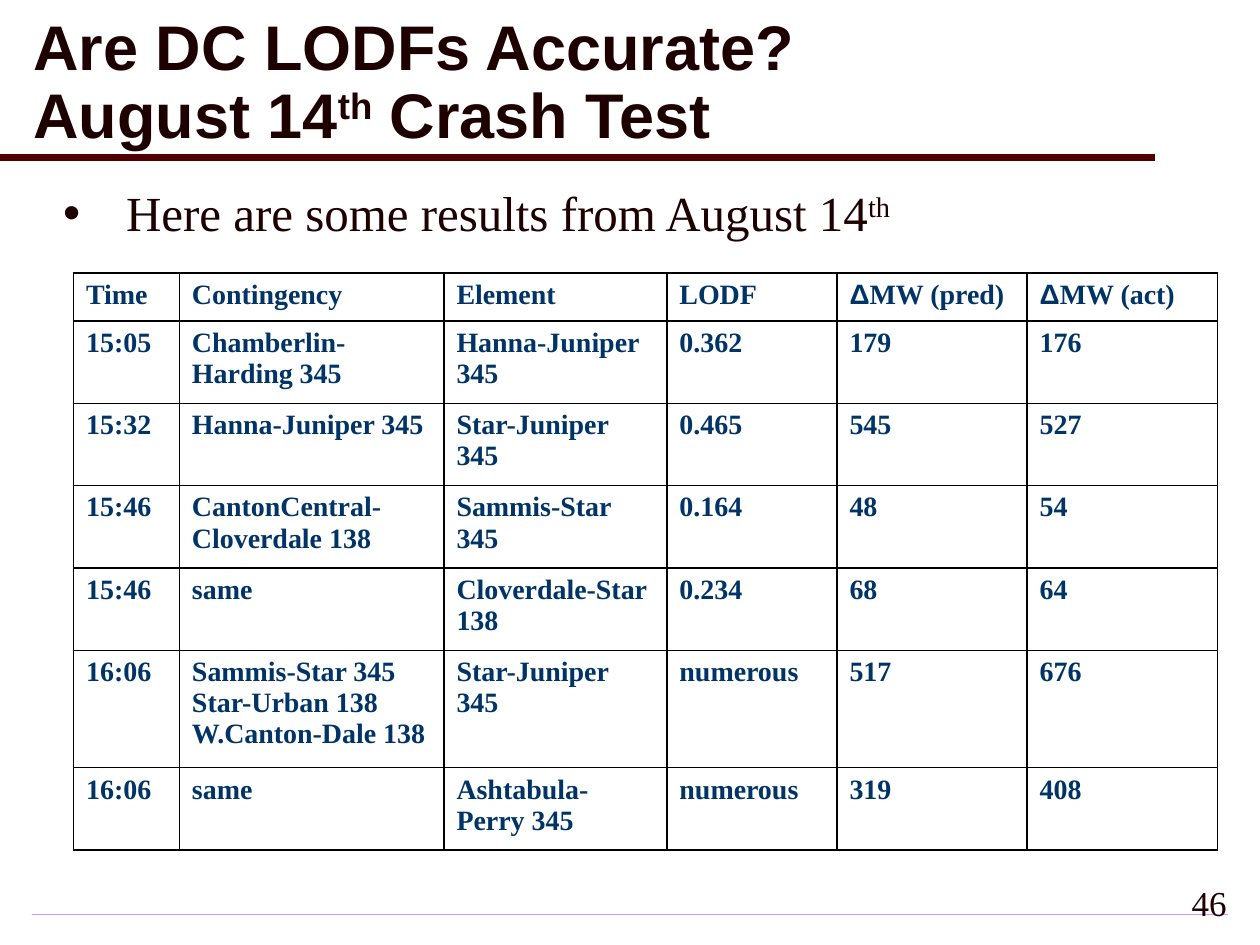
import pptx
import pptx.dml.color
import pptx.enum.shapes
import pptx.enum.text
import pptx.oxml
import pptx.oxml.ns
import pptx.util
from dataclasses import dataclass

Pt = pptx.util.Pt
RGB = pptx.dml.color.RGBColor.from_string
ALIGN = pptx.enum.text.PP_ALIGN
ANCHOR = pptx.enum.text.MSO_ANCHOR


@dataclass(frozen=True)
class Theme:
    heading_font: str = "Arial"
    body_font: str = "Times New Roman"
    ink: str = "1E0000"
    table_ink: str = "003366"
    border: str = "000000"
    title_rule: str = "500000"
    footer_start: str = "CC99FF"
    footer_end: str = "F3EBFF"
    title_size: int = 36
    body_size: int = 28
    number_size: int = 20
    table_size: int = 16


THEME = Theme()
TITLE_STYLE = {"name": THEME.heading_font, "size": Pt(THEME.title_size), "bold": True, "color": THEME.ink}
BODY_STYLE = {"name": THEME.body_font, "size": Pt(THEME.body_size), "color": THEME.ink}
NUMBER_STYLE = {**BODY_STYLE, "size": Pt(THEME.number_size)}
TABLE_STYLE = {"name": THEME.body_font, "size": Pt(THEME.table_size), "bold": True, "color": THEME.table_ink}

COLUMN_WIDTHS = [60.5, 151.2, 127.4, 97.2, 108.7, 108.7]
HEADER_HEIGHT = 27.4
LINE_HEIGHTS = {2: 47.1, 3: 67}
ROWS = [
    ["Time", "Contingency", "Element", "LODF", "ΔMW (pred)", "ΔMW (act)"],
    ["15:05", "Chamberlin-Harding 345", "Hanna-Juniper 345", "0.362", "179", "176"],
    ["15:32", "Hanna-Juniper 345", "Star-Juniper 345", "0.465", "545", "527"],
    ["15:46", "CantonCentral-Cloverdale 138", "Sammis-Star 345", "0.164", "48", "54"],
    ["15:46", "same", "Cloverdale-Star\n138", "0.234", "68", "64"],
    ["16:06", "Sammis-Star 345\nStar-Urban 138\nW.Canton-Dale 138", "Star-Juniper\n345", "numerous", "517", "676"],
    ["16:06", "same", "Ashtabula-Perry 345", "numerous", "319", "408"],
]


def make_element(xml):
    return pptx.oxml.parse_xml(xml.replace(" ", f" {pptx.oxml.ns.nsdecls('a')} ", 1))


def add_span(para, text, style):
    span = para.add_run()
    span.text = text
    for name, value in style.items():
        if name == "color":
            span.font.color.rgb = RGB(value)
        elif name == "baseline":
            span._r.get_or_add_rPr().set("baseline", str(value))
        else:
            setattr(span.font, name, value)


def add_superscript(para, text, style):
    add_span(para, text, {**style, "baseline": 30000})


def add_text_box(page, left, top, width, height, frame_format, para_format):
    box = page.shapes.add_textbox(Pt(left), Pt(top), Pt(width), Pt(height))
    frame = box.text_frame
    para = frame.paragraphs[0]
    for target, values in ((frame, {"word_wrap": True, **frame_format}), (para, para_format)):
        for name, value in values.items():
            setattr(target, name, value)
    return para


def add_bullet(para, indent):
    properties = para._p.get_or_add_pPr()
    properties.set("marL", str(Pt(indent)))
    properties.set("indent", str(Pt(-indent)))
    for xml in (
        f'<a:buClr ><a:srgbClr val="{THEME.ink}"/></a:buClr>',
        f'<a:buFont typeface="{THEME.heading_font}"/>',
        '<a:buChar char="•"/>',
    ):
        properties.append(make_element(xml))


def add_title_rule(page):
    rule = page.shapes.add_connector(
        pptx.enum.shapes.MSO_CONNECTOR.STRAIGHT, Pt(0), Pt(90), Pt(660), Pt(90))
    rule.line.color.rgb = RGB(THEME.title_rule)
    rule.line.width = Pt(4)
    rule._element.spPr.append(make_element("<a:effectLst />"))


def add_footer_rule(page):
    rule = page.shapes.add_shape(
        pptx.enum.shapes.MSO_SHAPE.RECTANGLE, Pt(18), Pt(522), Pt(684), Pt(0.72))
    rule.shadow.inherit = False
    rule.line.fill.background()
    rule.fill.gradient()
    for stop, color in zip(rule.fill.gradient_stops, (THEME.footer_start, THEME.footer_end)):
        stop.color.rgb = RGB(color)
    gradient = rule._element.spPr.find(pptx.oxml.ns.qn("a:gradFill"))
    linear = gradient.find(pptx.oxml.ns.qn("a:lin"))
    gradient.replace(linear, make_element(
        '<a:path path="shape"><a:fillToRect l="50000" t="50000" r="50000" b="50000"/></a:path>'))


def add_borders(cell):
    properties = cell._tc.get_or_add_tcPr()
    for position, side in enumerate("LRTB"):
        properties.insert(position, make_element(
            f'<a:ln{side} w="{Pt(1)}"><a:solidFill><a:srgbClr val="{THEME.border}"/>'
            f'</a:solidFill></a:ln{side}>'))


def fill_cell(cell, text):
    cell.fill.background()
    add_borders(cell)
    frame = cell.text_frame
    for number, line in enumerate(text.split("\n")):
        para = frame.add_paragraph() if number else frame.paragraphs[0]
        if line.startswith("Δ"):
            add_span(para, "Δ", {**TABLE_STYLE, "name": THEME.heading_font})
            line = line[1:]
        add_span(para, line, TABLE_STYLE)


def add_results_table(page):
    heights = [HEADER_HEIGHT] + [
        LINE_HEIGHTS[max(2, *(text.count("\n") + 1 for text in row))] for row in ROWS[1:]]
    table = page.shapes.add_table(
        len(ROWS), len(COLUMN_WIDTHS), Pt(42), Pt(156), Pt(sum(COLUMN_WIDTHS)), Pt(sum(heights))).table
    table.first_row = False
    table.horz_banding = False
    for column, width in zip(table.columns, COLUMN_WIDTHS):
        column.width = Pt(width)
    for row, height, texts in zip(table.rows, heights, ROWS):
        row.height = Pt(height)
        for cell, text in zip(row.cells, texts):
            fill_cell(cell, text)


def add_title(page):
    para = add_text_box(page, 12, 18, 690, 60, {"vertical_anchor": ANCHOR.MIDDLE}, {"line_spacing": 0.9})
    add_span(para, "Are DC LODFs Accurate?", TITLE_STYLE)
    para.add_line_break()
    add_span(para, "August 14", TITLE_STYLE)
    add_superscript(para, "th", TITLE_STYLE)
    add_span(para, " Crash Test", TITLE_STYLE)


def add_body(page):
    para = add_text_box(page, 29, 101, 612, 42, {}, {})
    add_bullet(para, 36)
    add_span(para, "Here are some results from August 14", BODY_STYLE)
    add_superscript(para, "th", BODY_STYLE)


def add_page_number(page):
    para = add_text_box(
        page, 558, 498, 150, 36, {"vertical_anchor": ANCHOR.MIDDLE}, {"alignment": ALIGN.RIGHT})
    add_span(para, "46", NUMBER_STYLE)


def main():
    deck = pptx.Presentation()
    deck.slide_width, deck.slide_height = Pt(720), Pt(540)
    page = deck.slides.add_slide(deck.slide_layouts[6])
    add_footer_rule(page)
    add_title_rule(page)
    add_page_number(page)
    add_title(page)
    add_body(page)
    add_results_table(page)
    deck.save("out.pptx")


if __name__ == "__main__":
    main()
